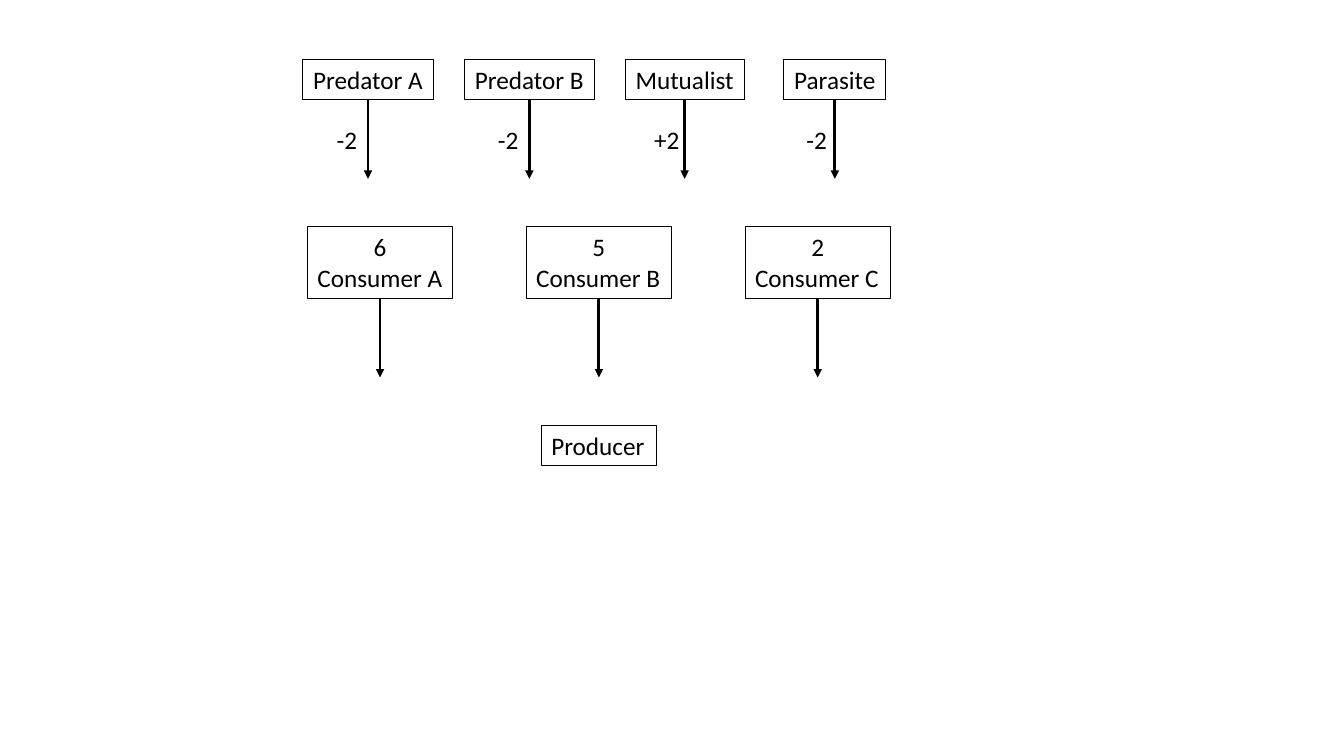
from lxml import etree
from pptx import Presentation
from pptx import util as u
from pptx.dml.color import RGBColor
from pptx.enum import shapes, text
from pptx.oxml.ns import qn

COLORS = {"ink": "000000"}
COLUMN = ROW = 0.1  # inches
BOTTOM = 2  # connection site of a rectangle
BLANK_LAYOUT = 6

ARROW_LENGTH = 7.85
CONSUMER_CENTRES = [37.7 + 21.7 * i for i in range(3)]

# name, centre, width, effect, left of effect, width of effect
INFLUENCES = [
    ("Predator A", 36.5, 13, "-2", 32.4, 4.1),
    ("Predator B", 52.5, 12.9, "-2", 48.4, 4.1),
    ("Mutualist", 67.9, 11.8, "+2", 63.9, 4.6),
    ("Parasite", 82.8, 10.1, "-2", 79, 4.1),
]
CONSUMERS = [("6", "Consumer A"), ("5", "Consumer B"), ("2", "Consumer C")]


def across(columns):
    return u.Inches(columns * COLUMN)


def down(rows):
    return u.Inches(rows * ROW)


class FoodWeb:
    font, size = "Calibri", u.Pt(18)
    ink = RGBColor.from_string(COLORS["ink"])

    def __init__(self, slide):
        self.slide = slide

    def set_lines(self, holder, lines, centred_lines):
        """Fill the holder, centring only its first centred_lines lines."""
        frame = holder.text_frame
        frame.text = "\n".join(lines)
        frame.word_wrap = False
        frame.auto_size = text.MSO_AUTO_SIZE.SHAPE_TO_FIT_TEXT
        frame.vertical_anchor = text.MSO_ANCHOR.TOP
        for i, paragraph in enumerate(frame.paragraphs):
            centred = i < centred_lines
            paragraph.alignment = text.PP_ALIGN.CENTER if centred else text.PP_ALIGN.LEFT
            paragraph.font.name = self.font
            paragraph.font.size = self.size
            paragraph.font.color.rgb = self.ink

    def box(self, centre, top, width, height, lines, centred_lines=1):
        outline = self.slide.shapes.add_shape(
            shapes.MSO_SHAPE.RECTANGLE,
            across(centre - width / 2), down(top), across(width), down(height))
        outline.shadow.inherit = False
        outline.fill.background()
        outline.line.color.rgb = self.ink
        outline.line.width = u.Pt(0.75)
        self.set_lines(outline, lines, centred_lines)
        return outline

    def label(self, left, top, width, height, wording):
        effect = self.slide.shapes.add_textbox(
            across(left), down(top), across(width), down(height))
        self.set_lines(effect, [wording], 0)

    def arrow_below(self, box):
        x, y = box.left + box.width // 2, box.top + box.height
        arrow = self.slide.shapes.add_connector(
            shapes.MSO_CONNECTOR.STRAIGHT, x, y, x, y + down(ARROW_LENGTH))
        arrow.begin_connect(box, BOTTOM)
        arrow.line.color.rgb = self.ink
        arrow.line.width = u.Pt(2)
        properties = arrow._element.spPr
        etree.SubElement(properties.find(qn("a:ln")), qn("a:tailEnd"), type="triangle")
        etree.SubElement(properties, qn("a:effectLst"))


def main():
    deck = Presentation()
    deck.slide_width, deck.slide_height = u.Inches(13.33), u.Inches(7.5)
    web = FoodWeb(deck.slides.add_slide(deck.slide_layouts[BLANK_LAYOUT]))

    web.box(CONSUMER_CENTRES[1], 42.2, 11.4, 4, ["Producer"], centred_lines=0)
    for centre, consumer in zip(CONSUMER_CENTRES, CONSUMERS):
        web.arrow_below(web.box(centre, 22.5, 14.4, 7.1, consumer))
    for name, centre, width, effect, effect_left, effect_width in INFLUENCES:
        web.arrow_below(web.box(centre, 5.9, width, 4, [name]))
        web.label(effect_left, 11.8, effect_width, 4, effect)

    deck.save("out.pptx")


if __name__ == "__main__":
    main()
